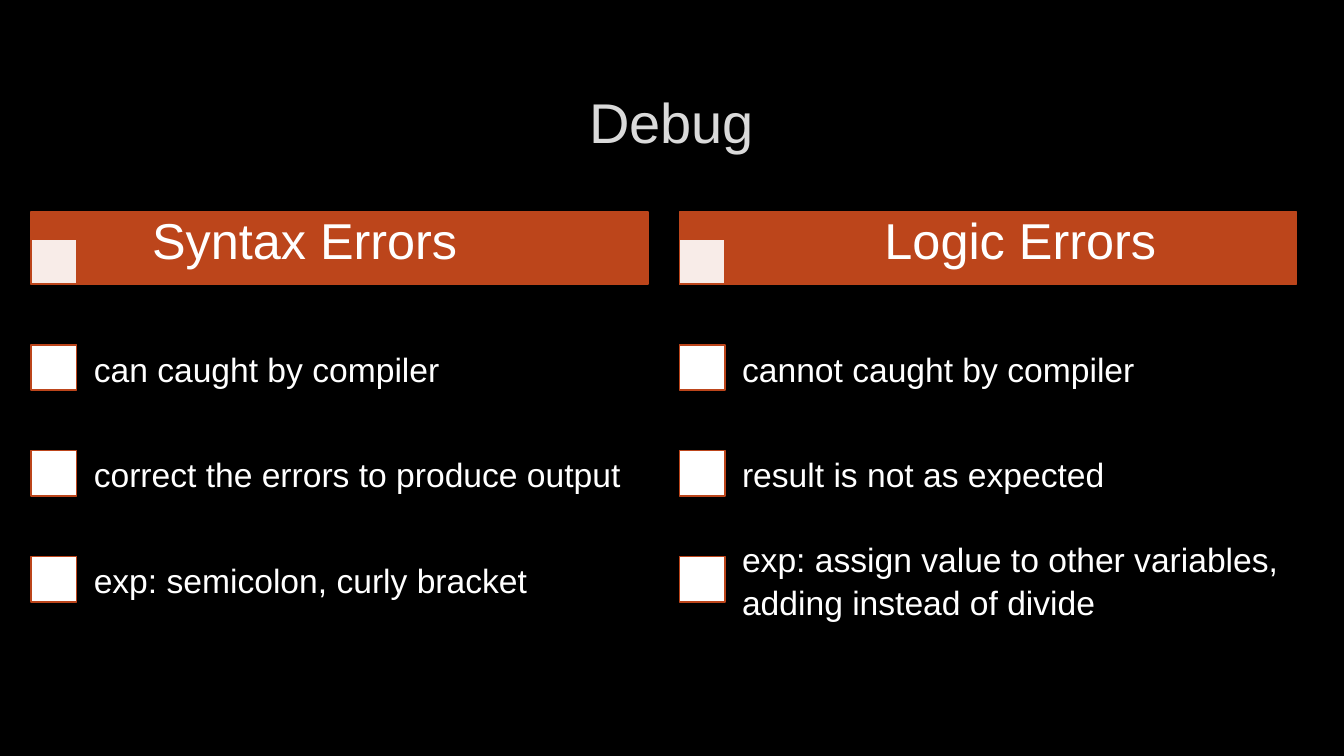
from lxml.etree import SubElement
from pptx import Presentation
from pptx.dml.color import RGBColor
from pptx.enum.shapes import MSO_SHAPE
from pptx.enum.text import MSO_ANCHOR, PP_ALIGN
from pptx.oxml.ns import qn
from pptx.util import Inches, Pt

COLORS = {"background": "000000", "title": "DADADA", "accent": "BC451B", "white": "FFFFFF"}
FONT = "Arial"
MARKER_SIZE = 0.45
ROW_HEIGHT = 1.05
COLUMN_WIDTH = 6.12
COLUMN_TOP = 2.1
COLUMNS = [
    {
        "left": 0.31,
        "heading": "Syntax Errors",
        "heading_offset": 1.1,
        "heading_align": PP_ALIGN.LEFT,
        "points": [
            "can caught by compiler",
            "correct the errors to produce output",
            "exp: semicolon, curly bracket",
        ],
    },
    {
        "left": 6.74,
        "heading": "Logic Errors",
        "heading_offset": 1.18,
        "heading_align": PP_ALIGN.CENTER,
        "points": [
            "cannot caught by compiler",
            "result is not as expected",
            "exp: assign value to other variables, adding instead of divide",
        ],
    },
]


def color(name):
    """Return the named palette colour."""
    return RGBColor.from_string(COLORS[name])


def add_block(slide, left, top, width, height, fill, opacity=100):
    """Add an accent-outlined rectangle with an optionally translucent fill."""
    block = slide.shapes.add_shape(
        MSO_SHAPE.RECTANGLE, Inches(left), Inches(top), Inches(width), Inches(height))
    block.shadow.inherit = False
    block.fill.solid()
    block.fill.fore_color.rgb = color(fill)
    block.line.color.rgb = color("accent")
    block.line.width = Pt(1.25)
    if opacity < 100:
        fill_color = block.fill._xPr.find(qn("a:solidFill"))[0]
        SubElement(fill_color, qn("a:alpha"), val=str(opacity * 1000))


def add_label(slide, left, top, width, height, text, size, fill="white",
              align=PP_ALIGN.LEFT, anchor=MSO_ANCHOR.MIDDLE, inset=None, spacing=None):
    """Add one wrapped paragraph of text in the given box."""
    label = slide.shapes.add_textbox(
        Inches(left), Inches(top), Inches(width), Inches(height))
    frame = label.text_frame
    frame.word_wrap = True
    frame.vertical_anchor = anchor
    if inset is not None:
        frame.margin_left = frame.margin_right = Inches(inset)
        frame.margin_top = frame.margin_bottom = Inches(inset)
    frame.text = text
    paragraph = frame.paragraphs[0]
    paragraph.alignment = align
    paragraph.line_spacing = spacing
    font = paragraph.runs[0].font
    font.name = FONT
    font.size = Pt(size)
    font.color.rgb = color(fill)


def add_column(slide, left, top, width, column):
    """Add a heading bar and its marked points."""
    add_block(slide, left, top, width, 0.72, "accent")
    add_block(slide, left, top + 0.27, MARKER_SIZE, MARKER_SIZE, "white", 90)
    for row, point in enumerate(column["points"]):
        row_top = top + 1.02 + row * ROW_HEIGHT
        marker_top = row_top + (ROW_HEIGHT - MARKER_SIZE) / 2
        add_block(slide, left, marker_top, MARKER_SIZE, MARKER_SIZE, "white")
        add_label(slide, left + 0.43, row_top, width - 0.42, ROW_HEIGHT, point, 24,
                  inset=0.19, spacing=1.06)
    add_label(slide, left + column["heading_offset"], top - 0.07, 4.4, 0.71,
              column["heading"], 36, align=column["heading_align"], anchor=MSO_ANCHOR.TOP)


def add_debug_slide(presentation):
    """Add the comparison of syntax and logic errors."""
    slide = presentation.slides.add_slide(presentation.slide_layouts[6])
    slide.background.fill.solid()
    slide.background.fill.fore_color.rgb = color("background")
    add_label(slide, 1, 0.67, 11.32, 1.06, "Debug", 40, "title", PP_ALIGN.CENTER)
    for column in COLUMNS:
        add_column(slide, column["left"], COLUMN_TOP, COLUMN_WIDTH, column)


def main():
    """Build and save the presentation."""
    presentation = Presentation()
    presentation.slide_width = Inches(13.33)
    presentation.slide_height = Inches(7.5)
    add_debug_slide(presentation)
    presentation.save("out.pptx")


if __name__ == "__main__":
    main()
